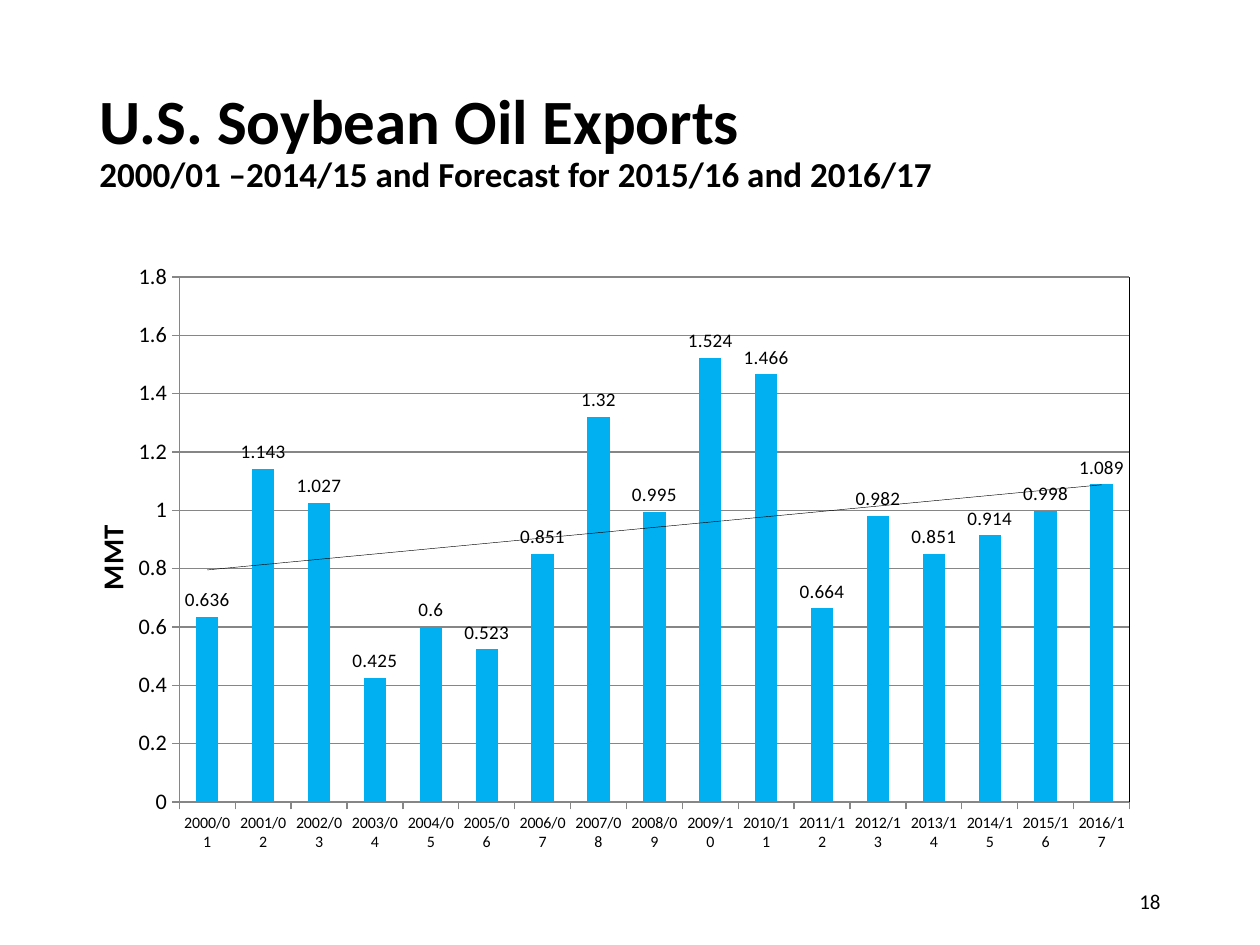
from lxml import etree
from pptx import Presentation
from pptx import util as u
from pptx.chart.data import CategoryChartData
from pptx.dml.color import RGBColor
from pptx.enum import chart as charts, text

SCALE = 914400 / 126  # EMU in one px
FONT = "Calibri"
COLORS = {"ink": "000000", "bar": "00B0F0", "grid": "868686"}
NS = "http://schemas.openxmlformats.org/drawingml/2006/chart"
DRAWING = "http://schemas.openxmlformats.org/drawingml/2006/main"
EXPORTS = [0.636, 1.143, 1.027, 0.425, 0.6, 0.523, 0.851, 1.32, 0.995,
           1.524, 1.466, 0.664, 0.982, 0.851, 0.914, 0.998, 1.089]
YEARS = [f"{year}/{(year + 1) % 100:02d}" for year in range(2000, 2017)]


def px(length):
    return u.Emu(round(length * SCALE))


def color(name):
    return RGBColor.from_string(COLORS[name])


def style_font(font, size, **values):
    for key, value in {"name": FONT, "size": u.Pt(size), **values}.items():
        setattr(font, key, value)
    font.color.rgb = color("ink")


def style_line(line, name):
    line.color.rgb = color(name)
    line.width = u.Pt(0.75)


def chart_xml(source):
    return etree.fromstring(source.replace(">", f' xmlns:c="{NS}" xmlns:a="{DRAWING}">', 1))


def outline_xml(width):
    return (f'<c:spPr><a:ln w="{width}"><a:solidFill><a:srgbClr val="{COLORS["ink"]}"/>'
            '</a:solidFill></a:ln></c:spPr>')


def set_layout(parent, index, **values):
    """Put a manual layout, in fractions of the chart, into a chart part."""
    for old in parent.findall(f"{{{NS}}}layout"):
        parent.remove(old)
    target = '<c:layoutTarget val="inner"/>' if "w" in values else ""
    modes = '<c:xMode val="edge"/><c:yMode val="edge"/>'
    sizes = "".join(f'<c:{key} val="{value}"/>' for key, value in values.items())
    parent.insert(index, chart_xml(
        f"<c:layout><c:manualLayout>{target}{modes}{sizes}</c:manualLayout></c:layout>"))


def add_text(page, box, lines, align, spacing=1.0):
    """Write (words, size, bold) lines in one middle-anchored paragraph."""
    frame = page.shapes.add_textbox(*map(px, box)).text_frame
    frame.word_wrap = True
    frame.vertical_anchor = text.MSO_ANCHOR.MIDDLE
    para = frame.paragraphs[0]
    para.alignment = align
    para.line_spacing = spacing
    for number, (words, size, bold) in enumerate(lines):
        if number:
            para.add_line_break()
        span = para.add_run()
        span.text = words
        style_font(span.font, size, bold=bold)


def add_export_chart(page, box):
    data = CategoryChartData()
    data.categories = YEARS
    data.add_series("Series 1", EXPORTS)
    chart = page.shapes.add_chart(
        charts.XL_CHART_TYPE.COLUMN_CLUSTERED, *map(px, box), data).chart
    chart.has_legend = chart.has_title = False
    style_font(chart.font, 16.4)

    # Axes and gridlines; level labels wrap inside their column
    for axis, size in ((chart.category_axis, 9.1), (chart.value_axis, 12.7)):
        axis.major_tick_mark = charts.XL_TICK_MARK.OUTSIDE
        style_font(axis.tick_labels.font, size, bold=False)
        style_line(axis.format.line, "grid")
        body = axis._element.find(f"{{{NS}}}txPr/{{{DRAWING}}}bodyPr")
        body.set("rot", "0")
        body.set("vert", "horz")
    value_axis = chart.value_axis
    for key, value in {"minimum_scale": 0, "maximum_scale": 1.8, "major_unit": 0.2,
                       "has_major_gridlines": True}.items():
        setattr(value_axis, key, value)
    style_line(value_axis.major_gridlines.format.line, "grid")
    title = value_axis.axis_title
    title.text_frame.text = "MMT"
    style_font(title.text_frame.paragraphs[0].runs[0].font, 16.4, bold=True)
    set_layout(title._element, 1, x=0, y=0.447)

    # Bars with value labels
    plot = chart.plots[0]
    plot.gap_width = 150
    plot.vary_by_categories = False
    series = plot.series[0]
    series.format.fill.solid()
    series.format.fill.fore_color.rgb = color("bar")
    labels = series.data_labels
    labels.show_value = True
    labels.position = charts.XL_LABEL_POSITION.OUTSIDE_END
    style_font(labels.font, 10.9, bold=False)

    # Linear trend
    series._element.find(f"{{{NS}}}cat").addprevious(chart_xml(
        f'<c:trendline>{outline_xml(3175)}<c:trendlineType val="linear"/>'
        '<c:dispRSqr val="0"/><c:dispEq val="0"/></c:trendline>'))

    # Plot area place and frame
    area = chart._chartSpace.find(f".//{{{NS}}}plotArea")
    set_layout(area, 0, x=0.085, y=0.042, w=0.875, h=0.875)
    area.append(chart_xml(outline_xml(3175)))


def main():
    deck = Presentation()
    deck.slide_width, deck.slide_height = px(1260), px(945)
    page = deck.slides.add_slide(deck.slide_layouts[6])
    # Title
    add_text(page, (87, 51, 1086, 183), [
        ("U.S. Soybean Oil Exports", 36, True),
        ("2000/01 –2014/15 and Forecast for 2015/16 and 2016/17", 20, True),
    ], text.PP_ALIGN.LEFT, 0.9)
    add_export_chart(page, (87, 252, 1086, 600))
    # Page number
    add_text(page, (890, 876, 283, 50), [("18", 12, False)], text.PP_ALIGN.RIGHT)
    deck.save("out.pptx")


if __name__ == "__main__":
    main()
